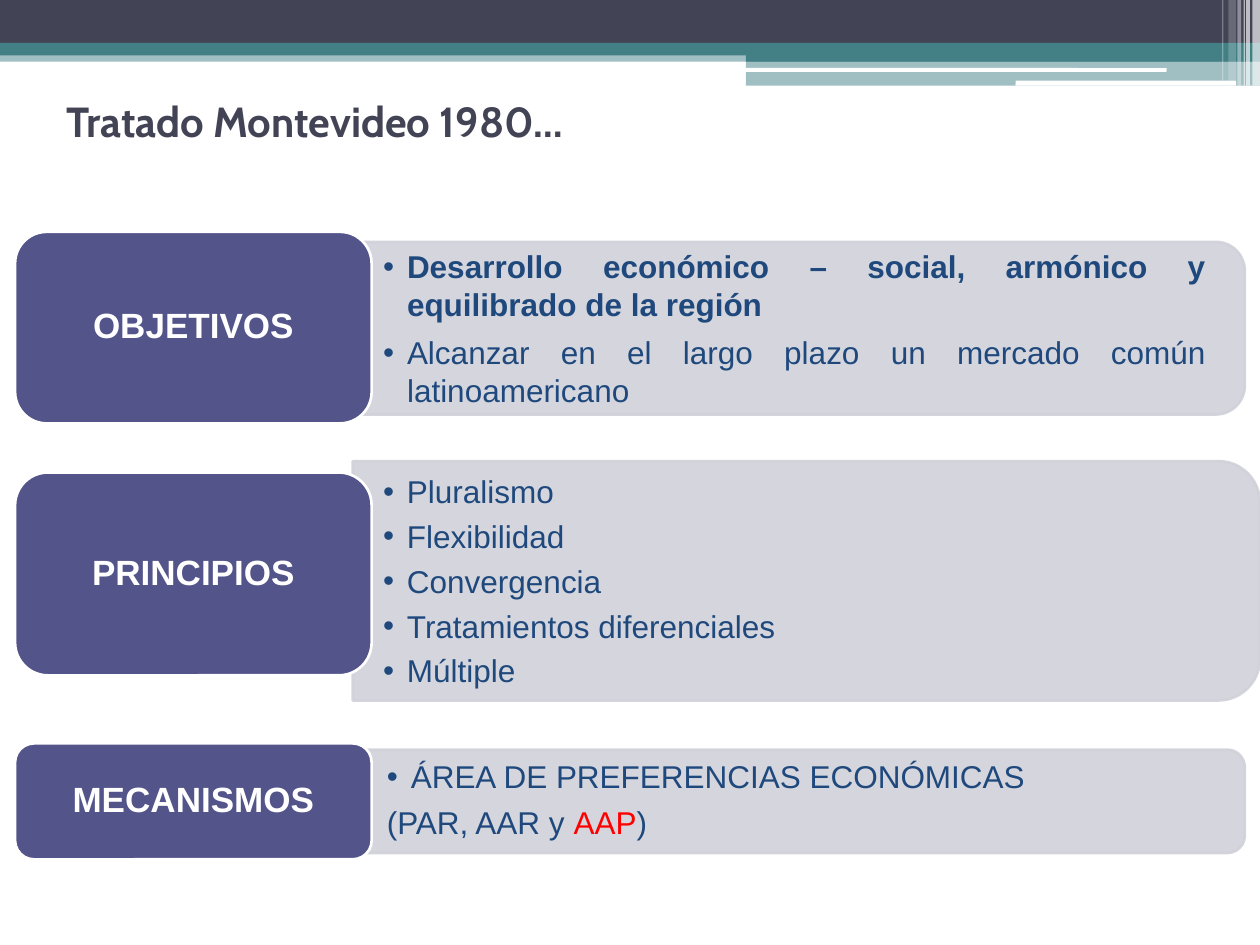
import math
import pptx
import pptx.util
import pptx.dml.color
import pptx.enum.shapes
import pptx.enum.text
import pptx.oxml.ns
import lxml.etree

# The grid is ten columns wide; rows have the same unit
COLS, ROWS = 10, 7.5
UNIT = pptx.util.Inches(10) // COLS
SHAPE = pptx.enum.shapes.MSO_SHAPE
ALIGN = pptx.enum.text.PP_ALIGN
MIDDLE = pptx.enum.text.MSO_ANCHOR.MIDDLE
DARK, TEAL, WHITE = "424456", "438086", "FFFFFF"
PURPLE, GREY, NAVY, RED = "53548A", "D1D1DA", "1F497D", "FF0000"
TAG_X, TAG_W, PANEL_X = 0.12, 2.83, 2.8
qn = pptx.oxml.ns.qn

# left, top, width, height, colour, opacity
BANDS = [
    (0, 0.4, COLS, 0.09, TEAL, 50),
    (0, 0, COLS, 0.34, DARK, 100),
    (0, 0.34, COLS, 0.1, TEAL, 100),
    (5.92, 0.39, 4.08, 0.1, TEAL, 100),
    (5.92, 0.48, 4.08, 0.2, TEAL, 50),
]
BARS = [(5.91, 0.54, 3.35, 0.03), (8.06, 0.64, 1.75, 0.04)]
# left, width, height, opacity
STRIPES = [
    (9.94, 0.06, 0.68, 65), (9.89, 0.03, 0.68, 65), (9.87, 0.01, 0.68, 60),
    (9.82, 0.03, 0.68, 40), (9.75, 0.06, 0.64, 20), (9.7, 0.01, 0.64, 30),
]

# tag: top, height, radius; panel: top, right, height, radius
# lines: runs, bold, bullet
SECTIONS = [
    dict(name="OBJETIVOS", tag=(1.84, 1.52, 0.25), panel=(1.92, 9.88, 1.37, 0.23),
         inset=(0.24, 0.08), before=6, after=0, pitch=1, lines=[
             ([("Desarrollo económico – social, armónico y equilibrado de la región", NAVY)],
              True, True),
             ([("Alcanzar en el largo plazo un mercado común latinoamericano", NAVY)],
              False, True)]),
    dict(name="PRINCIPIOS", tag=(3.75, 1.61, 0.26), panel=(3.66, 10, 1.9, 0.33),
         inset=(0.24, 0.08), before=4, after=0, pitch=1, lines=[
             ([(word, NAVY)], False, True) for word in (
                 "Pluralismo", "Flexibilidad", "Convergencia",
                 "Tratamientos diferenciales", "Múltiple")]),
    dict(name="MECANISMOS", tag=(5.9, 0.92, 0.15), panel=(5.95, 9.88, 0.82, 0.14),
         inset=(0.27, 0.18), before=4, after=2.7, pitch=0.9, lines=[
             ([("ÁREA DE PREFERENCIAS ECONÓMICAS", NAVY)], False, True),
             ([("(PAR, AAR y ", NAVY), ("AAP", RED), (")", NAVY)], False, False)]),
]


def grid(*nums):
    return [round(num * UNIT) for num in nums]


def tint(code):
    return pptx.dml.color.RGBColor.from_string(code)


def paint(shape, fill, line=None, alpha=100):
    shape.shadow.inherit = False
    shape.fill.solid()
    shape.fill.fore_color.rgb = tint(fill)
    if line:
        shape.line.color.rgb = tint(line)
        shape.line.width = pptx.util.Pt(1.5)
    else:
        shape.line.fill.background()
    if alpha < 100:
        for node in shape._element.spPr.iter(qn("a:srgbClr")):
            lxml.etree.SubElement(node, qn("a:alpha"), val=str(alpha * 1000))


def block(slide, box, fill, line=None, alpha=100, radius=None):
    kind = SHAPE.RECTANGLE if radius is None else SHAPE.ROUNDED_RECTANGLE
    shape = slide.shapes.add_shape(kind, *grid(*box))
    if radius is not None:
        shape.adjustments[0] = radius / min(box[2:])
    paint(shape, fill, line, alpha)
    return shape


def frame(shape, left, top, right):
    text = shape.text_frame
    text.word_wrap = True
    text.vertical_anchor = MIDDLE
    text.margin_left, text.margin_top, text.margin_right, text.margin_bottom = grid(
        left, top, right, top)
    return text


def style(para, face, size, bold, color=None):
    para.font.name = face
    para.font.size = pptx.util.Pt(size)
    para.font.bold = bold
    if color:
        para.font.color.rgb = tint(color)


def header(slide):
    for *box, color, alpha in BANDS:
        block(slide, box, color, alpha=alpha)
    for box in BARS:
        block(slide, box, WHITE, radius=box[3] / 6)
    for left, width, height, alpha in STRIPES:
        block(slide, (left, 0, width, height), WHITE, alpha=alpha)


def title(slide, words):
    box = slide.shapes.add_textbox(*grid(0.43, 0.6, 7.87, 0.71))
    para = frame(box, 0.1, 0.05, 0.1).paragraphs[0]
    para.text = words
    style(para, "Cabin", 24, True, DARK)


def outline(slide, top, right, height, radius):
    """Square on the left, rounded on the right."""
    base, steps = top + height, 12
    points = [(PANEL_X, top)]
    for turn, mid in ((-90, top + radius), (0, base - radius)):
        for step in range(steps + 1):
            angle = math.radians(turn + 90 * step / steps)
            points.append((right - radius + radius * math.cos(angle),
                           mid + radius * math.sin(angle)))
    points.append((PANEL_X, base))
    first, *rest = [grid(*point) for point in points]
    path = slide.shapes.build_freeform(*first)
    path.add_line_segments(rest, close=True)
    return path.convert_to_shape()


def indent(para, bullet):
    props = para._p.get_or_add_pPr()
    hang = grid(0.19)[0] if bullet else 0
    props.set("marL", str(hang))
    props.set("indent", str(-hang))
    if bullet:
        lxml.etree.SubElement(props, qn("a:buFont"), typeface="Arial")
        lxml.etree.SubElement(props, qn("a:buChar"), char="•")
    else:
        lxml.etree.SubElement(props, qn("a:buNone"))


def panel(slide, part):
    shape = outline(slide, *part["panel"])
    paint(shape, GREY, GREY, 90)
    text = frame(shape, *part["inset"], 0.31)
    for row, (runs, bold, bullet) in enumerate(part["lines"]):
        para = text.add_paragraph() if row else text.paragraphs[0]
        para.alignment = ALIGN.JUSTIFY
        para.level = 1
        para.line_spacing = part["pitch"]
        para.space_before = pptx.util.Pt(part["before"])
        para.space_after = pptx.util.Pt(part["after"])
        indent(para, bullet)
        style(para, "Arial", 18, bold)
        for words, color in runs:
            run = para.add_run()
            run.text = words
            run.font.color.rgb = tint(color)


def tag(slide, part):
    top, height, radius = part["tag"]
    shape = block(slide, (TAG_X, top, TAG_W, height), PURPLE, WHITE, radius=radius)
    para = frame(shape, 0.15, 0.1, 0.15).paragraphs[0]
    para.text = part["name"]
    para.alignment = ALIGN.CENTER
    para.line_spacing = 0.9
    style(para, "Arial", 20, True, WHITE)


def main():
    deck = pptx.Presentation()
    deck.slide_width, deck.slide_height = grid(COLS, ROWS)
    slide = deck.slides.add_slide(deck.slide_layouts[6])
    header(slide)
    title(slide, "Tratado Montevideo 1980…")
    # Each tag overlaps the left edge of its panel
    for part in SECTIONS:
        panel(slide, part)
        tag(slide, part)
    deck.save("out.pptx")


if __name__ == "__main__":
    main()
